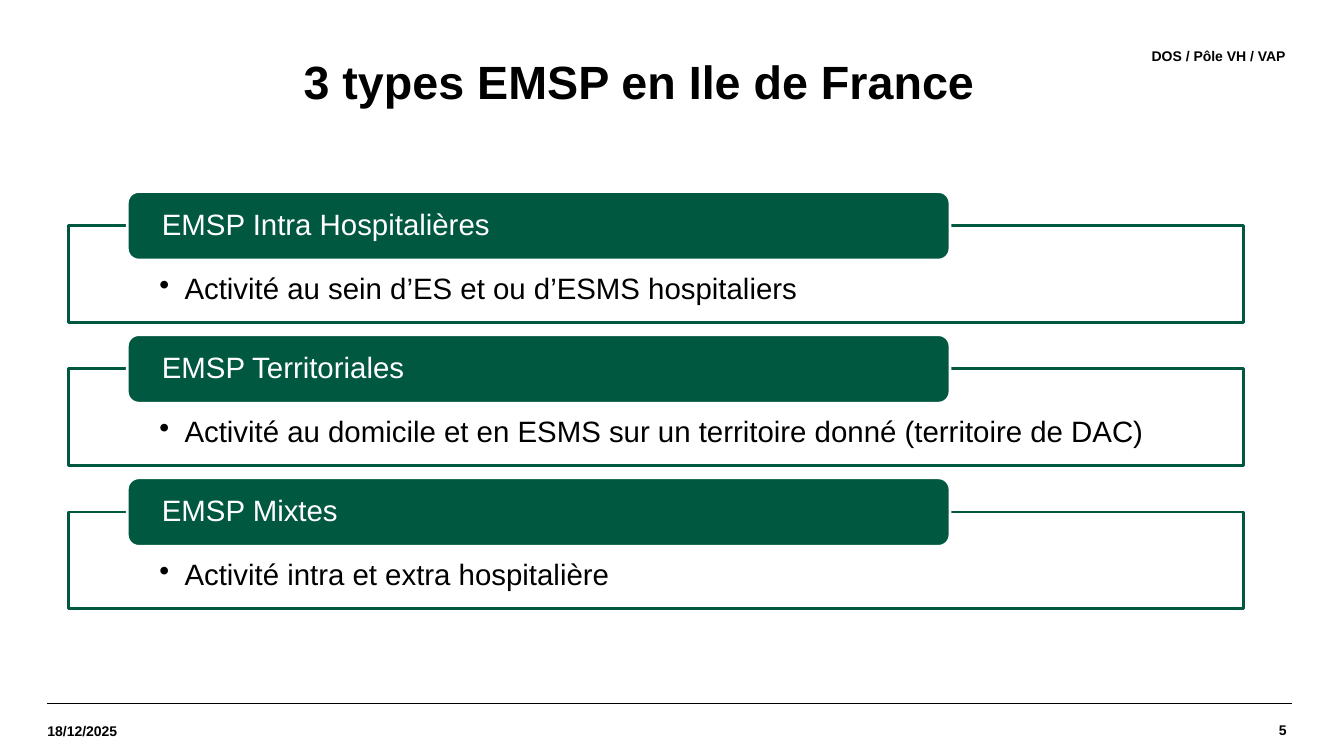
from lxml import etree
from pptx import Presentation, util as u
from pptx.dml.color import RGBColor
from pptx.enum import shapes as sh, text as tx
from pptx.oxml import ns

GREEN = RGBColor(0x00, 0x58, 0x41)
WHITE = RGBColor(0xFF, 0xFF, 0xFF)
BLACK = RGBColor(0, 0, 0)
LEFT, RIGHT = tx.PP_ALIGN.LEFT, tx.PP_ALIGN.RIGHT
TOP, MID = tx.MSO_ANCHOR.TOP, tx.MSO_ANCHOR.MIDDLE

TITLE = "3 types EMSP en Ile de France"
TYPES = [
    ("EMSP Intra Hospitalières", "Activité au sein d’ES et ou d’ESMS hospitaliers"),
    ("EMSP Territoriales",
     "Activité au domicile et en ESMS sur un territoire donné (territoire de DAC)"),
    ("EMSP Mixtes", "Activité intra et extra hospitalière"),
]
NOTES = [
    ("DOS / Pôle VH / VAP", (4.18, 0.29, 8.57, 0.52), RIGHT),
    ("18/12/2025", (0.47, 7, 1.71, 0.5), LEFT),
    ("5", (10.79, 6.98, 1.97, 0.52), RIGHT),
]
SMALL = dict(size=u.Pt(10), bold=True)
HEAD = dict(size=u.Pt(33.3), bold=True)
BODY = dict(size=u.Pt(21), bold=False)

WIDE, HIGH = 13.33, 7.5
X, Y, STEP = 0.68, 2.24, 1.42
BOX = (11.65, 0.96)
BAR = (8.16, 0.68)
INDENT = BOX[0] * 0.05


def inch(vals):
    return [u.Inches(v) for v in vals]


def write(shape, words, font, color=BLACK, align=LEFT, anchor=MID,
          pad=(0, 0, 0, 0), space=None, dot=False):
    frame = shape.text_frame
    frame.word_wrap = True
    frame.auto_size = tx.MSO_AUTO_SIZE.NONE
    frame.vertical_anchor = anchor
    for side, gap in zip(("left", "top", "right", "bottom"), inch(pad)):
        setattr(frame, "margin_" + side, gap)
    frame.text = words
    para = frame.paragraphs[0]
    para.alignment = align
    if space:
        para.line_spacing = space
    if dot:
        props = para._p.get_or_add_pPr()
        props.set("marL", str(u.Inches(0.25)))
        props.set("indent", str(-u.Inches(0.25)))
        etree.SubElement(props, ns.qn("a:buChar"), char="•")
    for key, val in dict(font, name="Arial").items():
        setattr(para.runs[0].font, key, val)
    para.runs[0].font.color.rgb = color


def block(slide, kind, place, fill, line):
    shape = slide.shapes.add_shape(kind, *inch(place))
    shape.shadow.inherit = False
    shape.fill.solid()
    shape.fill.fore_color.rgb = fill
    shape.line.color.rgb = line
    shape.line.width = u.Pt(2)
    return shape


def main():
    deck = Presentation()
    deck.slide_width, deck.slide_height = inch((WIDE, HIGH))
    slide = deck.slides.add_slide(deck.slide_layouts[5])

    title = slide.shapes.title
    title.left, title.top, title.width, title.height = inch((2.89, 0.44, 7.56, 0.79))
    write(title, TITLE, HEAD, pad=(0.12, 0.05, 0.1, 0.05), space=0.9)

    rule = slide.shapes.add_connector(
        sh.MSO_CONNECTOR.STRAIGHT, *inch((0.47, 6.98, 12.81, 6.98)))
    rule.line.color.rgb = BLACK
    rule.line.width = u.Pt(0.8)
    etree.SubElement(rule._element.spPr, ns.qn("a:effectLst"))

    for row, (name, role) in enumerate(TYPES):
        top = Y + row * STEP
        box = block(slide, sh.MSO_SHAPE.RECTANGLE, (X, top, *BOX), WHITE, GREEN)
        write(box, role, BODY, anchor=TOP, pad=(0.9, 0.48, 0.9, 0.16),
              space=0.9, dot=True)
        bar = block(slide, sh.MSO_SHAPE.ROUNDED_RECTANGLE,
                    (X + INDENT, top - BAR[1] / 2, *BAR), GREEN, WHITE)
        write(bar, name, BODY, color=WHITE, pad=(0.31, 0, 0.31, 0), space=0.9)

    for words, place, align in NOTES:
        write(slide.shapes.add_textbox(*inch(place)), words, SMALL, align=align)

    deck.save("out.pptx")


if __name__ == "__main__":
    main()
